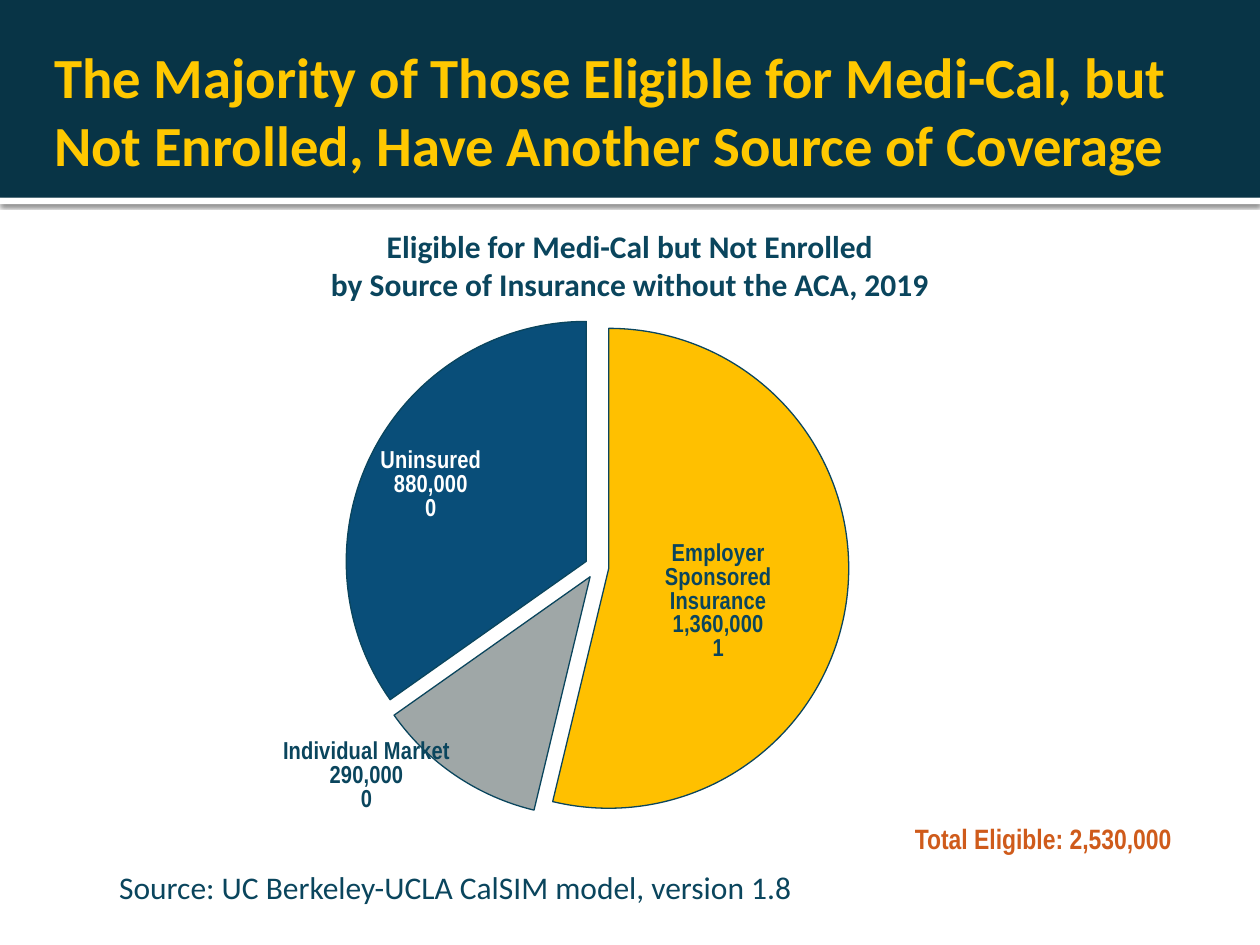
from lxml import etree
from pptx import Presentation
from pptx import util as u
from pptx.chart.data import CategoryChartData
from pptx.dml.color import RGBColor
from pptx.enum import chart as charts, shapes, text
from pptx.oxml import parse_xml
from pptx.oxml.ns import nsdecls, qn

NAVY, YELLOW, INK, WHITE = "083446", "FFC800", "0A455D", "FFFFFF"
SLICES = [
    # category, value, fill, label colour, label offset as fractions of the chart
    ("Employer Sponsored Insurance", 1360000, "FFC000", INK, (-0.01, 0.04)),
    ("Individual Market", 290000, "9FA7A7", INK, (-0.16, 0.2)),
    ("Uninsured", 880000, "094E79", WHITE, (-0.05, -0.04)),
]


def color(value):
    """Turn a hex string into a colour."""
    return RGBColor.from_string(value)


def style_font(font, size, value, name="Calibri", bold=False):
    """Set the face, size, weight and colour of a font."""
    font.name, font.size, font.bold = name, u.Pt(size), bold
    font.color.rgb = color(value)


def add_band(slide, top, height, fill):
    """Add a full-width borderless band."""
    shape = slide.shapes.add_shape(
        shapes.MSO_SHAPE.RECTANGLE, 0, u.Inches(top), u.Inches(10), u.Inches(height))
    shape.shadow.inherit = False
    shape.fill.solid()
    shape.fill.fore_color.rgb = color(fill)
    shape.line.fill.background()
    return shape


def add_drop_shadow(shape):
    """Give a shape a soft shadow straight below it."""
    effects = shape._element.spPr.find(qn("a:effectLst"))
    effects.append(parse_xml(
        f'<a:outerShdw {nsdecls("a")} blurRad="{u.Pt(2.5)}" dist="{u.Pt(0.8)}" '
        'dir="5400000" algn="t" rotWithShape="0">'
        '<a:srgbClr val="000000"><a:alpha val="60000"/></a:srgbClr></a:outerShdw>'))


def set_title(slide, words):
    """Place and format the title above the bands."""
    title = slide.shapes.title
    slide.shapes._spTree.append(title._element)
    title.left, title.top = u.Inches(0.33), u.Inches(0.17)
    title.width, title.height = u.Inches(9.33), u.Inches(1.41)
    frame = title.text_frame
    frame.word_wrap = True
    frame.auto_size = text.MSO_AUTO_SIZE.NONE
    frame.vertical_anchor = text.MSO_ANCHOR.MIDDLE
    frame.margin_right = u.Inches(0.05)
    paragraph = frame.paragraphs[0]
    paragraph.alignment = text.PP_ALIGN.LEFT
    run = paragraph.add_run()
    run.text = words
    style_font(run.font, 32.4, YELLOW, bold=True)


def add_text(slide, box, lines, size, value, wrap=True, **style):
    """Add a centred text box with one paragraph per line."""
    frame = slide.shapes.add_textbox(*map(u.Inches, box)).text_frame
    frame.word_wrap = wrap
    frame.auto_size = text.MSO_AUTO_SIZE.SHAPE_TO_FIT_TEXT
    for index, line in enumerate(lines):
        paragraph = frame.add_paragraph() if index else frame.paragraphs[0]
        paragraph.alignment = text.PP_ALIGN.CENTER
        run = paragraph.add_run()
        run.text = line
        style_font(run.font, size, value, **style)


def manual_layout(**settings):
    """Build a chart layout element from its settings."""
    layout = parse_xml(f'<c:layout {nsdecls("c")}><c:manualLayout/></c:layout>')
    for name, value in settings.items():
        etree.SubElement(layout[0], qn(f"c:{name}")).set("val", str(value))
    return layout


def format_slice(series, index, fill, label_color, offset):
    """Colour one slice and place its three-part label."""
    point = series.points[index]
    point.format.fill.solid()
    point.format.fill.fore_color.rgb = color(fill)
    point.format.line.color.rgb = color(INK)
    point.format.line.width = u.Pt(0.75)
    label = point.data_label
    style_font(label.font, 14, label_color, "Arial Narrow", True)
    label.position = charts.XL_LABEL_POSITION.CENTER
    element = series._element.find(qn("c:dLbls")).findall(qn("c:dLbl"))[index]
    element.insert(1, manual_layout(x=offset[0], y=offset[1]))
    element.insert(2, parse_xml(
        f'<c:numFmt {nsdecls("c")} formatCode="#,##0" sourceLinked="0"/>'))
    for name in ("showVal", "showCatName", "showPercent"):
        element.find(qn(f"c:{name}")).set("val", "1")
    for name in ("showLegendKey", "showSerName"):
        element.find(qn(f"c:{name}")).set("val", "0")
    etree.SubElement(element, qn("c:separator")).text = "\n"


def add_pie(slide):
    """Add the exploded pie of eligible people."""
    data = CategoryChartData(number_format="#,##0")
    data.categories = [row[0] for row in SLICES]
    data.add_series("Series 1", [row[1] for row in SLICES])
    chart = slide.shapes.add_chart(
        charts.XL_CHART_TYPE.PIE, u.Inches(1.25), u.Inches(2.5),
        u.Inches(7.75), u.Inches(4), data).chart
    chart.has_legend = chart.has_title = False
    style_font(chart.font, 10, INK, "Arial Narrow")
    plot = chart.plots[0]
    plot.vary_by_categories = True
    series = plot.series[0]
    for index, (_, _, fill, label_color, offset) in enumerate(SLICES):
        format_slice(series, index, fill, label_color, offset)
    leader = series._element.find(qn("c:dLbls")).find(qn("c:showLeaderLines"))
    if leader is not None:
        leader.set("val", "0")
    explosion = parse_xml(f'<c:explosion {nsdecls("c")} val="5"/>')
    series._element.find(qn("c:dPt")).addprevious(explosion)
    for point in series._element.findall(qn("c:dPt")):
        point.find(qn("c:spPr")).addprevious(
            parse_xml(f'<c:explosion {nsdecls("c")} val="5"/>'))
    area = chart._chartSpace.chart.plotArea
    for layout in area.findall(qn("c:layout")):
        area.remove(layout)
    area.insert(0, manual_layout(layoutTarget="inner", xMode="edge", yMode="edge",
                                 x=0.148, y=0, w=0.604, h=1))


def main():
    """Build and save the slide."""
    presentation = Presentation()
    presentation.slide_width, presentation.slide_height = u.Inches(10), u.Inches(7.5)
    slide = presentation.slides.add_slide(presentation.slide_layouts[5])
    add_drop_shadow(add_band(slide, 1.57, 0.05, WHITE))
    add_band(slide, 0, 1.57, NAVY)
    set_title(slide, "The Majority of Those Eligible for Medi-Cal, but "
                     "Not Enrolled, Have Another Source of Coverage")
    add_pie(slide)
    add_text(slide, (0.25, 1.75, 9.5, 0.71),
             ["Eligible for Medi-Cal but Not Enrolled",
              "by Source of Insurance without the ACA, 2019"], 18, INK, bold=True)
    add_text(slide, (0.53, 6.84, 6.17, 0.42),
             ["Source: UC Berkeley-UCLA CalSIM model, version 1.8"], 18, INK)
    add_text(slide, (7.15, 6.47, 2.26, 0.37), ["Total Eligible: 2,530,000"],
             16, "CF5B1B", wrap=False, name="Arial Narrow", bold=True)
    presentation.save("out.pptx")


if __name__ == "__main__":
    main()
